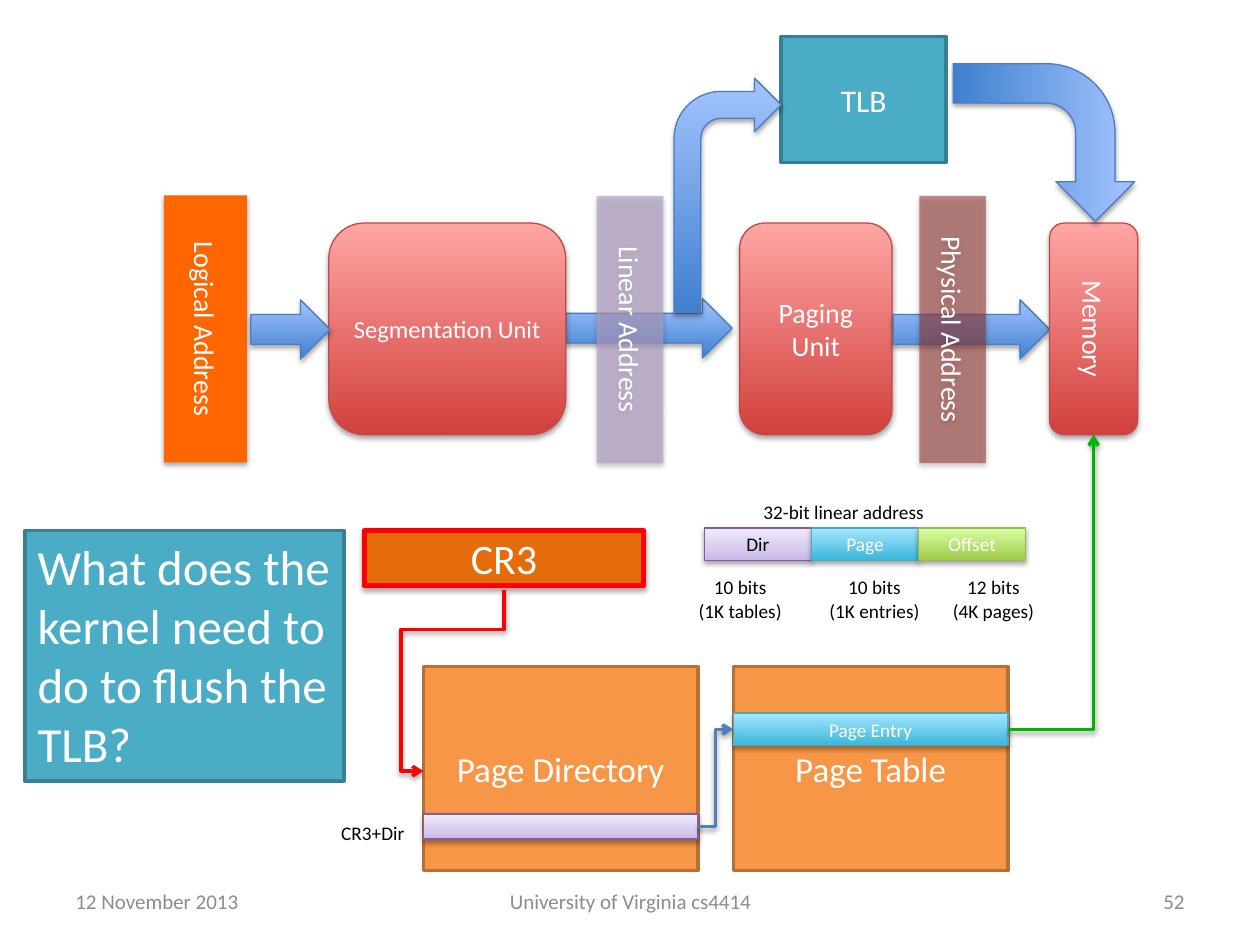
"""Build a slide on address translation with a TLB, a page directory and a page table."""
import lxml.etree
import pptx
import pptx.dml.color
import pptx.enum.shapes
import pptx.enum.text
import pptx.oxml.ns
import pptx.util

Inches, Pt = pptx.util.Inches, pptx.util.Pt
SHAPE = pptx.enum.shapes.MSO_SHAPE
ALIGN = pptx.enum.text.PP_ALIGN
ANCHOR = pptx.enum.text.MSO_ANCHOR
qn = pptx.oxml.ns.qn

THEME = {
    "font": "Calibri",
    "sizes": {"footer": 12, "note": 11, "unit": 14, "address": 16, "cache": 18,
              "table": 20, "register": 24, "question": 28},
    "ink": "000000", "light": "FFFFFF", "muted": "8C8C8C",
    "styles": {
        "logical": {"fill": "FF6600", "shadow": True},
        "linear": {"fill": "B3A2C7", "alpha": 66, "shadow": True},
        "physical": {"fill": "953735", "alpha": 57, "shadow": True},
        "unit": {"fill": [(0, "D1403C"), (100, "FFA6A5")], "line": ("BF4C48", 0.75), "shadow": True},
        "flow": {"fill": [(0, "3F80CE"), (100, "A4C4FF")], "line": ("4B7EBC", 0.75), "shadow": True},
        "cache": {"fill": "4BACC6", "line": ("377F92", 2)},
        "register": {"fill": "E46C0A", "line": ("FF0000", 3), "shadow": True},
        "table": {"fill": "F79646", "line": ("B76F34", 2)},
        "dir": {"fill": [(0, "C9B5E8"), (35, "D8CBEE"), (100, "F0EAF9")],
                "line": ("7D60A0", 0.75), "shadow": True, "ink": "000000"},
        "page": {"fill": [(0, "39B7D8"), (100, "A7E6FF")], "line": ("46AAC5", 0.75), "shadow": True},
        "offset": {"fill": [(0, "A0CA4A"), (100, "DAFFA5")], "line": ("98B955", 0.75), "shadow": True},
    },
    "links": {"register": "FF0000", "dir": "4F81BD", "page": "00B501"},
}

UNIT_TOP, UNIT_HEIGHT = 1.77, 1.68
TABLE_TOP, TABLE_WIDTH, TABLE_HEIGHT = 5.29, 2.18, 1.62
DIRECTORY_LEFT, PAGE_TABLE_LEFT = 3.36, 5.82
FIELD_LEFT, FIELD_TOP, FIELD_WIDTH, FIELD_HEIGHT = 5.59, 4.19, 0.85, 0.26

FOOTER = [
    ("12 November 2013", (0.5, 6.95, 2.33, 0.4), ALIGN.LEFT),
    ("University of Virginia cs4414", (3.42, 6.95, 3.17, 0.4), ALIGN.CENTER),
    ("52", (7.17, 6.95, 2.33, 0.4), ALIGN.RIGHT),
]
BOXES = [
    ("Logical Address", SHAPE.RECTANGLE, "logical", "address", (0.57, 2.28, 2.12, 0.66), 90),
    ("", SHAPE.RIGHT_ARROW, "flow", "note", (4.49, 2.37, 1.32, 0.47), 0),
    ("Segmentation Unit", SHAPE.ROUNDED_RECTANGLE, "unit", "unit", (2.61, UNIT_TOP, 1.88, UNIT_HEIGHT), 0),
    ("Linear Address", SHAPE.RECTANGLE, "linear", "address", (3.94, 2.35, 2.12, 0.53), 90),
    ("Paging\nUnit", SHAPE.ROUNDED_RECTANGLE, "unit", "address", (5.87, UNIT_TOP, 1.21, UNIT_HEIGHT), 0),
    ("", SHAPE.RIGHT_ARROW, "flow", "note", (1.99, 2.38, 0.63, 0.47), 0),
    ("", SHAPE.RIGHT_ARROW, "flow", "note", (7.09, 2.38, 1.24, 0.47), 0),
    ("Physical Address", SHAPE.RECTANGLE, "physical", "address", (6.5, 2.35, 2.12, 0.53), 90),
    ("Memory", SHAPE.ROUNDED_RECTANGLE, "unit", "address", (8.33, UNIT_TOP, 0.7, UNIT_HEIGHT), 0),
    ("TLB", SHAPE.RECTANGLE, "cache", "cache", (6.2, 0.29, 1.31, 1), 0),
    ("", SHAPE.BENT_ARROW, "flow", "note", (5.35, 0.62, 0.85, 1.86), 0),
    ("", SHAPE.BENT_ARROW, "flow", "note", (7.66, 0.41, 1.25, 1.44), 90),
    ("What does the kernel need to do to flush the TLB?", SHAPE.RECTANGLE, "cache", "question",
     (0.2, 4.21, 2.53, 1.99), 0),
    ("CR3", SHAPE.RECTANGLE, "register", "register", (2.89, 4.21, 2.22, 0.44), 0),
    ("Page Directory", SHAPE.RECTANGLE, "table", "table",
     (DIRECTORY_LEFT, TABLE_TOP, TABLE_WIDTH, TABLE_HEIGHT), 0),
    ("Page Table", SHAPE.RECTANGLE, "table", "table",
     (PAGE_TABLE_LEFT, TABLE_TOP, TABLE_WIDTH, TABLE_HEIGHT), 0),
]
FIELDS = [("Dir", "dir"), ("Page", "page"), ("Offset", "offset")]
ENTRIES = [
    ("", "dir", (DIRECTORY_LEFT, 6.46, TABLE_WIDTH, 0.2)),
    ("Page Entry", "page", (PAGE_TABLE_LEFT, 5.66, TABLE_WIDTH, 0.26)),
]
NOTES = [
    ("CR3+Dir", (2.61, 6.47, 0.71, 0.29), ALIGN.LEFT),
    ("12 bits\n(4K pages)", (7.46, 4.52, 0.85, 0.47), ALIGN.CENTER),
    ("10 bits\n(1K tables)", (5.44, 4.52, 0.87, 0.47), ALIGN.CENTER),
    ("10 bits\n(1K entries)", (6.48, 4.52, 0.92, 0.47), ALIGN.CENTER),
    ("32-bit linear address", (5.96, 3.92, 1.49, 0.29), ALIGN.LEFT),
]


def rgb(code):
    """Return a colour from its hex code."""
    return pptx.dml.color.RGBColor.from_string(code)


def add_node(parent, tag, **attributes):
    """Append a drawing element and return it."""
    return lxml.etree.SubElement(parent, qn(tag), {key: str(value) for key, value in attributes.items()})


def add_shadow(effects):
    """Put a soft downward shadow into an effect list."""
    shadow = add_node(effects, "a:outerShdw", blurRad=Pt(3.1), dist=Pt(1.8), dir=5400000, rotWithShape=0)
    add_node(add_node(shadow, "a:srgbClr", val="000000"), "a:alpha", val=35000)


def write(shape, text, size, ink, align):
    """Fill a shape with lines of text in one font."""
    frame = shape.text_frame
    frame.text = text
    for para in frame.paragraphs:
        para.alignment = align
        para.font.name = THEME["font"]
        para.font.size = Pt(THEME["sizes"][size])
        para.font.color.rgb = rgb(ink)


def paint(shape, style):
    """Apply the fill, outline and shadow of a style."""
    properties, fill = shape.element.spPr, style["fill"]
    if isinstance(fill, str):
        shape.fill.solid()
        shape.fill.fore_color.rgb = rgb(fill)
        if "alpha" in style:
            color = properties.find(qn("a:solidFill"))[0]
            add_node(color, "a:alpha", val=style["alpha"] * 1000)
    else:
        shape.fill.gradient()
        shape.fill.gradient_angle = 90
        stops = properties.find(qn("a:gradFill")).find(qn("a:gsLst"))
        for stop in list(stops):
            stops.remove(stop)
        for position, code in fill:
            add_node(add_node(stops, "a:gs", pos=position * 1000), "a:srgbClr", val=code)
    if "line" in style:
        code, width = style["line"]
        shape.line.color.rgb = rgb(code)
        shape.line.width = Pt(width)
    else:
        shape.line.fill.background()
    shape.shadow.inherit = False
    if style.get("shadow"):
        add_shadow(properties.find(qn("a:effectLst")))


def add_box(page, text, geometry, style_name, size, place, turn=0):
    """Add a painted shape with centred text."""
    style = THEME["styles"][style_name]
    box = page.shapes.add_shape(geometry, *map(Inches, place))
    box.rotation = turn
    paint(box, style)
    if text:
        write(box, text, size, style.get("ink", THEME["light"]), ALIGN.CENTER)
    return box


def add_label(page, text, place, size, ink, align, anchor, wrap):
    """Add a plain text box."""
    label = page.shapes.add_textbox(*map(Inches, place))
    label.text_frame.word_wrap = wrap
    label.text_frame.vertical_anchor = anchor
    write(label, text, size, ink, align)


def add_link(page, start, start_side, end, end_side, color, preset="bentConnector3"):
    """Join two boxes with an elbow arrow."""
    link = page.shapes.add_connector(pptx.enum.shapes.MSO_CONNECTOR.ELBOW, 0, 0, 0, 0)
    link.begin_connect(start, start_side)
    link.end_connect(end, end_side)
    link.line.color.rgb = rgb(color)
    link.line.width = Pt(2)
    properties = link.element.spPr
    properties.find(qn("a:prstGeom")).set("prst", preset)
    add_node(properties.find(qn("a:ln")), "a:tailEnd", type="arrow")
    add_shadow(add_node(properties, "a:effectLst"))
    return link


def bend_around(link, place, adjustments):
    """Turn a link a quarter and set its bends."""
    link.left, link.top, link.width, link.height = map(Inches, place)
    frame = link.element.spPr.find(qn("a:xfrm"))
    frame.attrib.pop("flipH", None)
    frame.set("rot", "5400000")
    guides = link.element.spPr.find(qn("a:prstGeom")).find(qn("a:avLst"))
    for number, value in enumerate(adjustments, 1):
        add_node(guides, "a:gd", name=f"adj{number}", fmla=f"val {round(value * 100000)}")


def main():
    """Assemble and save the deck."""
    deck = pptx.Presentation()
    deck.slide_width, deck.slide_height = Inches(10), Inches(7.5)
    page = deck.slides.add_slide(deck.slide_layouts[6])
    for text, place, align in FOOTER:
        add_label(page, text, place, "footer", THEME["muted"], align, ANCHOR.MIDDLE, True)
    boxes = {}
    for text, geometry, style, size, place, turn in BOXES:
        boxes[text] = add_box(page, text, geometry, style, size, place, turn)
    boxes["Memory"].text_frame._txBody.bodyPr.set("vert", "vert")
    question = boxes["What does the kernel need to do to flush the TLB?"].text_frame
    question.vertical_anchor = ANCHOR.TOP
    question.paragraphs[0].alignment = ALIGN.LEFT
    for column, (text, style) in enumerate(FIELDS):
        place = (FIELD_LEFT + column * FIELD_WIDTH, FIELD_TOP, FIELD_WIDTH, FIELD_HEIGHT)
        add_box(page, text, SHAPE.RECTANGLE, style, "note", place)
    dir_entry, page_entry = [add_box(page, text, SHAPE.RECTANGLE, style, "note", place)
                             for text, style, place in ENTRIES]
    for text, place, align in NOTES:
        add_label(page, text, place, "note", THEME["ink"], align, ANCHOR.TOP, False)
    links = THEME["links"]
    around = add_link(page, boxes["CR3"], 2, boxes["Page Directory"], 1, links["register"], "bentConnector4")
    bend_around(around, (2.96, 5.08, 1.44, 0.64), (0.22, 1.28))
    add_link(page, dir_entry, 3, page_entry, 1, links["dir"])
    add_link(page, page_entry, 3, boxes["Memory"], 2, links["page"], "bentConnector2")
    deck.save("out.pptx")


if __name__ == "__main__":
    main()
